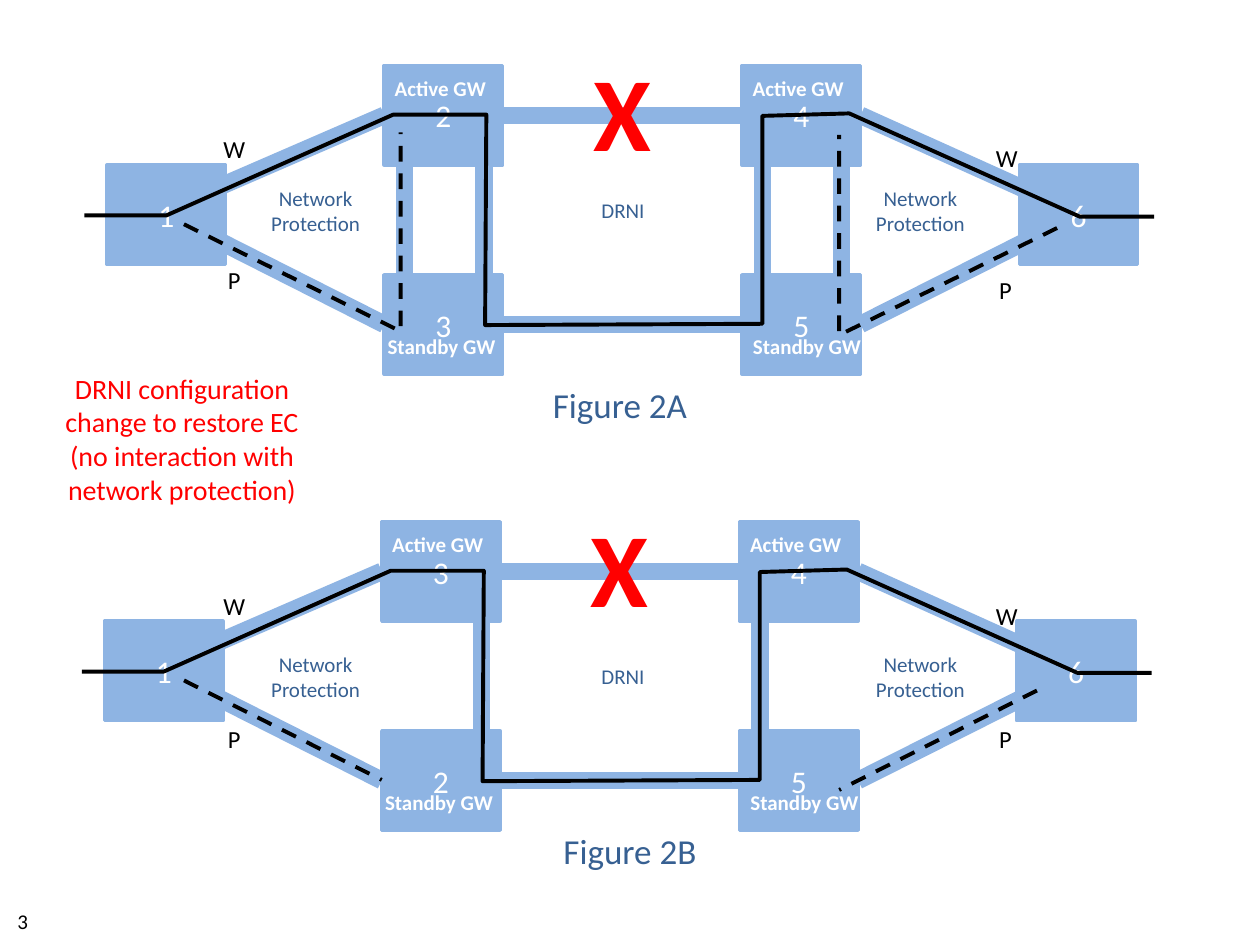
from pptx import Presentation
from pptx.dml.color import RGBColor
from pptx.enum.dml import MSO_LINE
from pptx.enum.shapes import MSO_CONNECTOR, MSO_SHAPE
from pptx.enum.text import MSO_ANCHOR, MSO_AUTO_SIZE, PP_ALIGN
from pptx.oxml.ns import qn
from pptx.util import Inches, Pt
from lxml.etree import SubElement

SKY = RGBColor(0x8E, 0xB4, 0xE3)
NAVY = RGBColor(0x37, 0x60, 0x92)
RED = RGBColor(0xFF, 0x00, 0x00)
BLACK = RGBColor(0x00, 0x00, 0x00)
WHITE = RGBColor(0xFF, 0xFF, 0xFF)

FONT = "Calibri"
NODE_WIDTH, NODE_HEIGHT = 0.94, 0.79
TOP, RIGHT, LEFT = 0, 3, 1  # connection sites used on the nodes

# Route of the working path, in the coordinates of figure 2A
WORKING_PATH = [(0.67, 1.71), (1.32, 1.71), (3.12, 0.91), (3.86, 0.91),
                (3.85, 2.58), (6.05, 2.57), (6.05, 0.92), (6.74, 0.9),
                (8.57, 1.72), (9.16, 1.72)]

FIGURE_A = {
    "offset": (0, 0), "gateways": ("2", "3"), "inner_links": (3.21, 3.84, 6.05, 6.68),
    "working_tops": (1.06, 1.13), "protect_tops": (2.1, 2.18), "region_top": 1.47,
    "caption": ("Figure 2A", 4.29, 3.04),
    "standby_paths": [[(1.46, 1.78), (3.18, 2.63), (3.18, 1.05)],
                      [(8.39, 1.81), (6.66, 2.66), (6.66, 1.07)]],
}
FIGURE_B = {
    "offset": (-0.02, 3.62), "gateways": ("3", "2"), "inner_links": (3.84, 6.05),
    "working_tops": (4.69, 4.77), "protect_tops": (5.74, 5.74), "region_top": 5.17,
    "caption": ("Figure 2B", 4.37, 6.58),
    "standby_paths": [[(1.46, 5.4), (3.03, 6.19)], [(8.23, 5.48), (6.66, 6.27)]],
}


def format_text(frame, size, color, bold=False, align=PP_ALIGN.CENTER):
    frame.vertical_anchor = MSO_ANCHOR.MIDDLE
    for para in frame.paragraphs:
        para.alignment = align
        for span in para.runs:
            span.font.name = FONT
            span.font.size = Pt(size)
            span.font.bold = bold
            span.font.color.rgb = color


def add_label(page, text, left, top, width, height, size, color,
              bold=False, wrap=False, align=PP_ALIGN.CENTER, grow=True):
    box = page.shapes.add_textbox(Inches(left), Inches(top), Inches(width), Inches(height))
    frame = box.text_frame
    frame.text = text
    frame.margin_left = frame.margin_right = frame.margin_top = frame.margin_bottom = 0
    frame.word_wrap = wrap
    frame.auto_size = MSO_AUTO_SIZE.SHAPE_TO_FIT_TEXT if grow else MSO_AUTO_SIZE.NONE
    format_text(frame, size, color, bold, align)


def add_node(page, text, left, top):
    node = page.shapes.add_shape(MSO_SHAPE.RECTANGLE, Inches(left), Inches(top),
                                 Inches(NODE_WIDTH), Inches(NODE_HEIGHT))
    node.shadow.inherit = False
    node.fill.solid()
    node.fill.fore_color.rgb = SKY
    node.line.color.rgb = SKY
    node.line.width = Pt(2)
    node.text_frame.text = text
    format_text(node.text_frame, 18, WHITE)
    return node


def add_line(page, start, end, color=SKY, width=10):
    line = page.shapes.add_connector(MSO_CONNECTOR.STRAIGHT, Inches(start[0]),
                                     Inches(start[1]), Inches(end[0]), Inches(end[1]))
    line.line.color.rgb = color
    line.line.width = Pt(width)
    SubElement(line._element.spPr, qn("a:effectLst"))
    return line


def add_route(page, points, dashed=False):
    """Black path: a plain line for two points, an open outline for more."""
    if len(points) == 2:
        route = add_line(page, *points, BLACK, 2.25)
    else:
        start, *rest = [(Inches(x), Inches(y)) for x, y in points]
        builder = page.shapes.build_freeform(*start)
        builder.add_line_segments(rest, close=False)
        route = builder.convert_to_shape()
        route.shadow.inherit = False
        route.fill.background()
        route.line.color.rgb = BLACK
        route.line.width = Pt(2.25)
    if dashed:
        route.line.dash_style = MSO_LINE.DASH


def add_network(page, figure):
    """Nodes, links, working path and gateway names, moved by the figure's offset."""
    dx, dy = figure["offset"]

    def at(x, y):
        return x + dx, y + dy

    # Gateways
    upper, lower = figure["gateways"]
    left_pair = [add_node(page, upper, *at(3.05, 0.52)), add_node(page, lower, *at(3.05, 2.18))]
    right_pair = [add_node(page, "4", *at(5.89, 0.52)), add_node(page, "5", *at(5.89, 2.18))]

    # Access links, which run under the end nodes
    rows = (0.92, 2.57)
    for y, start_x, west, east in zip(rows, (1.24, 1.32), left_pair, right_pair):
        link = add_line(page, at(start_x, 1.7), at(3.05, y))
        link.end_connect(west, LEFT)
        link = add_line(page, at(8.57, 1.7), at(6.83, y))
        link.end_connect(east, RIGHT)
    add_node(page, "1", *at(0.85, 1.31))
    add_node(page, "6", *at(8.09, 1.31))

    # Links between the gateways
    for y, west, east in zip(rows, left_pair, right_pair):
        link = add_line(page, at(3.99, y), at(5.89, y))
        link.begin_connect(west, RIGHT)
        link.end_connect(east, LEFT)
    for x in figure["inner_links"]:
        add_line(page, at(x, 1.31), at(x, 2.18))

    # Failure mark and working path
    add_label(page, "X", *at(4.71, 0.52), 0.46, 0.69, 60, RED, bold=True,
              align=PP_ALIGN.LEFT, grow=False)
    add_route(page, [at(x, y) for x, y in WORKING_PATH])

    # Gateway names
    for active_x, standby_x in ((3.13, 3.07), (5.97, 5.97)):
        add_label(page, "Active GW", *at(active_x, 0.6), 0.73, 0.2, 12, WHITE, bold=True)
        add_label(page, "Standby GW", *at(standby_x, 2.65), 0.87, 0.2, 12, WHITE, bold=True)


def add_annotations(page, figure):
    """Path letters, region names, protection paths and caption."""
    for x, top in zip((1.77, 7.9), figure["working_tops"]):
        add_label(page, "W", x, top, 0.18, 0.24, 14, BLACK)
    for x, top in zip((1.81, 7.93), figure["protect_tops"]):
        add_label(page, "P", x, top, 0.1, 0.24, 14, BLACK)

    top = figure["region_top"]
    for x in (2.09, 6.89):
        add_label(page, "Network Protection", x, top, 0.83, 0.4, 12, NAVY, wrap=True)
    add_label(page, "DRNI", 4.53, top + 0.1, 0.83, 0.2, 12, NAVY, wrap=True)

    for points in figure["standby_paths"]:
        add_route(page, points, dashed=True)

    caption, x, y = figure["caption"]
    add_label(page, caption, x, y, 1.26, 0.34, 20, NAVY, wrap=True)


def main():
    deck = Presentation()
    deck.slide_width, deck.slide_height = Inches(10), Inches(7.5)
    page = deck.slides.add_slide(deck.slide_layouts[6])

    for figure in (FIGURE_B, FIGURE_A):
        add_network(page, figure)
        add_annotations(page, figure)

    # Remark and page number
    add_label(page, "DRNI configuration change to restore EC\n"
              "(no interaction with network protection)",
              0.43, 2.94, 2.03, 1.08, 16, RED, wrap=True)
    add_label(page, "3", 0.08, 7.21, 0.2, 0.2, 12, BLACK)

    deck.save("out.pptx")


if __name__ == "__main__":
    main()
